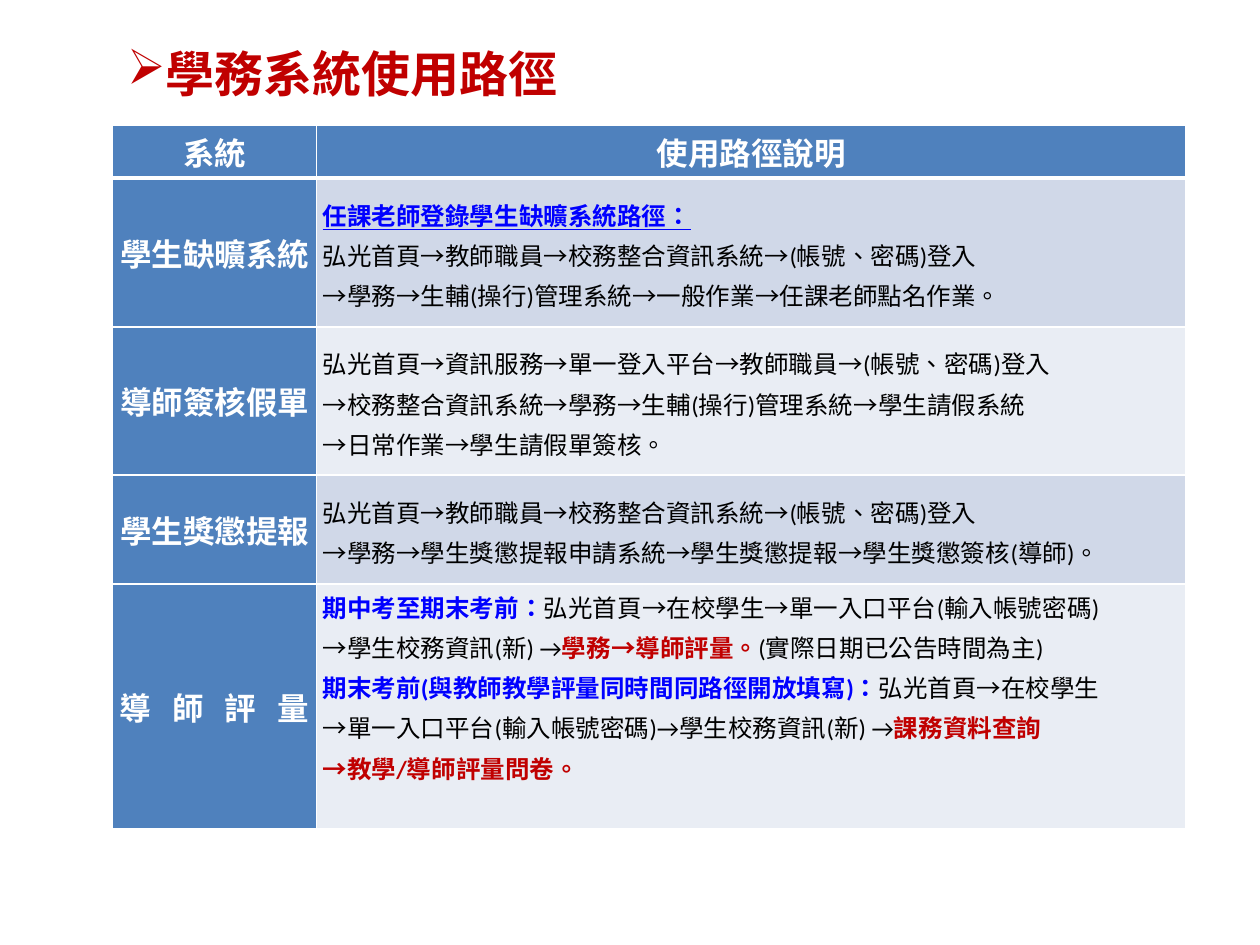
from dataclasses import dataclass

from lxml import etree
from pptx import Presentation
from pptx.dml.color import RGBColor
from pptx.enum import lang, text
from pptx.oxml import ns
from pptx.util import Pt


@dataclass(frozen=True)
class Theme:
    latin: str = "Calibri"
    cjk: str = "Noto Sans CJK SC"
    title_size: float = 28
    head_size: float = 18
    body_size: float = 14
    line_height: float = 23
    white: str = "FFFFFF"
    black: str = "000000"
    blue: str = "0000FF"
    red: str = "C00000"
    head_fill: str = "4F81BD"
    bands: tuple = ("D0D8E8", "E9EDF4")


THEME = Theme()
PLAIN = (THEME.black, False)
BLUE = (THEME.blue, True)
RED = (THEME.red, True)


def sub(parent, tag, **attributes):
    return etree.SubElement(parent, ns.qn(tag), attributes)


class SlideBuilder:
    def __init__(self, slide, theme):
        self.slide = slide
        self.theme = theme

    def style(self, font, size, latin):
        font.size = Pt(size)
        font.name = latin
        font.language_id = lang.MSO_LANGUAGE_ID.TRADITIONAL_CHINESE
        latin_node = font._element.find(ns.qn("a:latin"))
        east_asian = etree.Element(ns.qn("a:ea"), typeface=self.theme.cjk)
        latin_node.addnext(east_asian)

    def ink(self, font, color, bold):
        font.color.rgb = RGBColor.from_string(color)
        font.bold = bold

    def title(self, wording, left, top, width, height):
        box = self.slide.shapes.add_textbox(Pt(left), Pt(top), Pt(width), Pt(height))
        frame = box.text_frame
        frame.word_wrap = True
        frame.auto_size = text.MSO_AUTO_SIZE.SHAPE_TO_FIT_TEXT
        frame.vertical_anchor = text.MSO_ANCHOR.MIDDLE
        frame.margin_top = frame.margin_bottom = 0
        heading = frame.paragraphs[0]
        properties = heading._p.get_or_add_pPr()
        properties.set("marL", str(Pt(20)))
        properties.set("indent", str(-Pt(20)))
        sub(properties, "a:buChar", char="➢")
        heading.add_run().text = wording
        self.style(heading.font, self.theme.title_size, self.theme.cjk)
        self.ink(heading.font, self.theme.red, True)

    def table(self, left, top, widths, heights):
        frame = self.slide.shapes.add_table(
            len(heights), len(widths), Pt(left), Pt(top), Pt(sum(widths)), Pt(sum(heights)))
        for column, width in zip(frame.table.columns, widths):
            column.width = Pt(width)
        for row, height in zip(frame.table.rows, heights):
            row.height = Pt(height)
        return frame.table

    def cell(self, cell, fill, top_line=1, bottom_line=1):
        cell.margin_left = cell.margin_right = Pt(3.6)
        cell.margin_top = cell.margin_bottom = 0
        cell.vertical_anchor = text.MSO_ANCHOR.MIDDLE
        # Borders come before the fill in the cell properties
        properties = cell._tc.get_or_add_tcPr()
        edges = {"a:lnL": 1, "a:lnR": 1, "a:lnT": top_line, "a:lnB": bottom_line}
        for edge, weight in edges.items():
            line = sub(properties, edge, w=str(Pt(weight)))
            sub(sub(line, "a:solidFill"), "a:srgbClr", val=self.theme.white)
        cell.fill.solid()
        cell.fill.fore_color.rgb = RGBColor.from_string(fill)

    def label(self, cell, wording, latin, spread=0):
        """Centred white heading; spread is extra space between characters."""
        paragraph = cell.text_frame.paragraphs[0]
        paragraph.alignment = text.PP_ALIGN.CENTER
        self.style(paragraph.font, self.theme.head_size, latin)
        self.ink(paragraph.font, self.theme.white, True)
        pieces = [(wording[:-1], spread), (wording[-1], 0)] if spread else [(wording, 0)]
        for piece, gap in pieces:
            run = paragraph.add_run()
            run.text = piece
            if gap:
                run.font._element.set("spc", str(gap * 100))

    def path_lines(self, cell, lines):
        frame = cell.text_frame
        for number, pieces in enumerate(lines):
            paragraph = frame.add_paragraph() if number else frame.paragraphs[0]
            paragraph.alignment = text.PP_ALIGN.JUSTIFY
            paragraph.line_spacing = Pt(self.theme.line_height)
            self.style(paragraph.font, self.theme.body_size, self.theme.latin)
            if len(pieces) == 1:
                self.ink(paragraph.font, *pieces[0][1])
            for wording, look in pieces:
                run = paragraph.add_run()
                run.text = wording
                if len(pieces) > 1:
                    self.ink(run.font, *look)


# Content: system name, then lines of (wording, look) pieces
LOGIN = "弘光首頁→教師職員→校務整合資訊系統→(帳號、密碼)登入"
HEADINGS = ("系統", "使用路徑說明")
SYSTEMS = [
    ("學生缺曠系統", [
        [("任課老師登錄學生缺曠系統路徑：", BLUE)],
        [(LOGIN, PLAIN)],
        [("→學務→生輔(操行)管理系統→一般作業→任課老師點名作業。", PLAIN)],
    ]),
    ("導師簽核假單", [
        [("弘光首頁→資訊服務→單一登入平台→教師職員→(帳號、密碼)登入", PLAIN)],
        [("→校務整合資訊系統→學務→生輔(操行)管理系統→學生請假系統", PLAIN)],
        [("→日常作業→學生請假單簽核。", PLAIN)],
    ]),
    ("學生獎懲提報", [
        [(LOGIN, PLAIN)],
        [("→學務→學生獎懲提報申請系統→學生獎懲提報→學生獎懲簽核(導師)。", PLAIN)],
    ]),
    ("導 師 評 量", [
        [("期中考至期末考前：", BLUE),
         ("弘光首頁→在校學生→單一入口平台(輸入帳號密碼)", PLAIN)],
        [("→學生校務資訊(新) →", PLAIN), ("學務→導師評量。", RED),
         ("(實際日期已公告時間為主)", PLAIN)],
        [("期末考前(與教師教學評量同時間同路徑開放填寫)：", BLUE),
         ("弘光首頁→在校學生", PLAIN)],
        [("→單一入口平台(輸入帳號密碼)→學生校務資訊(新) →", PLAIN),
         ("課務資料查詢", RED)],
        [("→教學/導師評量問卷。", RED)],
    ]),
]


def main():
    deck = Presentation()
    deck.slide_width, deck.slide_height = Pt(720), Pt(540)
    builder = SlideBuilder(deck.slides.add_slide(deck.slide_layouts[6]), THEME)

    # Table of systems and their paths
    table = builder.table(64.4, 71.6, (116.4, 496.8), (30.2, 85.2, 84.5, 62.3, 140))
    for column, heading in enumerate(HEADINGS):
        builder.cell(table.cell(0, column), THEME.head_fill, bottom_line=3)
        builder.label(table.cell(0, column), heading, THEME.cjk)
    for row, (system, lines) in enumerate(SYSTEMS, start=1):
        name, path = table.cell(row, 0), table.cell(row, 1)
        top_line = 3 if row == 1 else 1
        builder.cell(name, THEME.head_fill, top_line)
        builder.label(name, system, THEME.latin, spread=4 if " " in system else 0)
        builder.cell(path, THEME.bands[(row - 1) % 2], top_line)
        builder.path_lines(path, lines)

    # Underlined lead line, and the longest path set from the top
    table.cell(1, 1).text_frame.paragraphs[0].font.underline = True
    table.cell(len(SYSTEMS), 1).vertical_anchor = text.MSO_ANCHOR.TOP

    # Title
    builder.title("學務系統使用路徑", 65.5, 21, 373, 41)
    deck.save("out.pptx")


if __name__ == "__main__":
    main()
